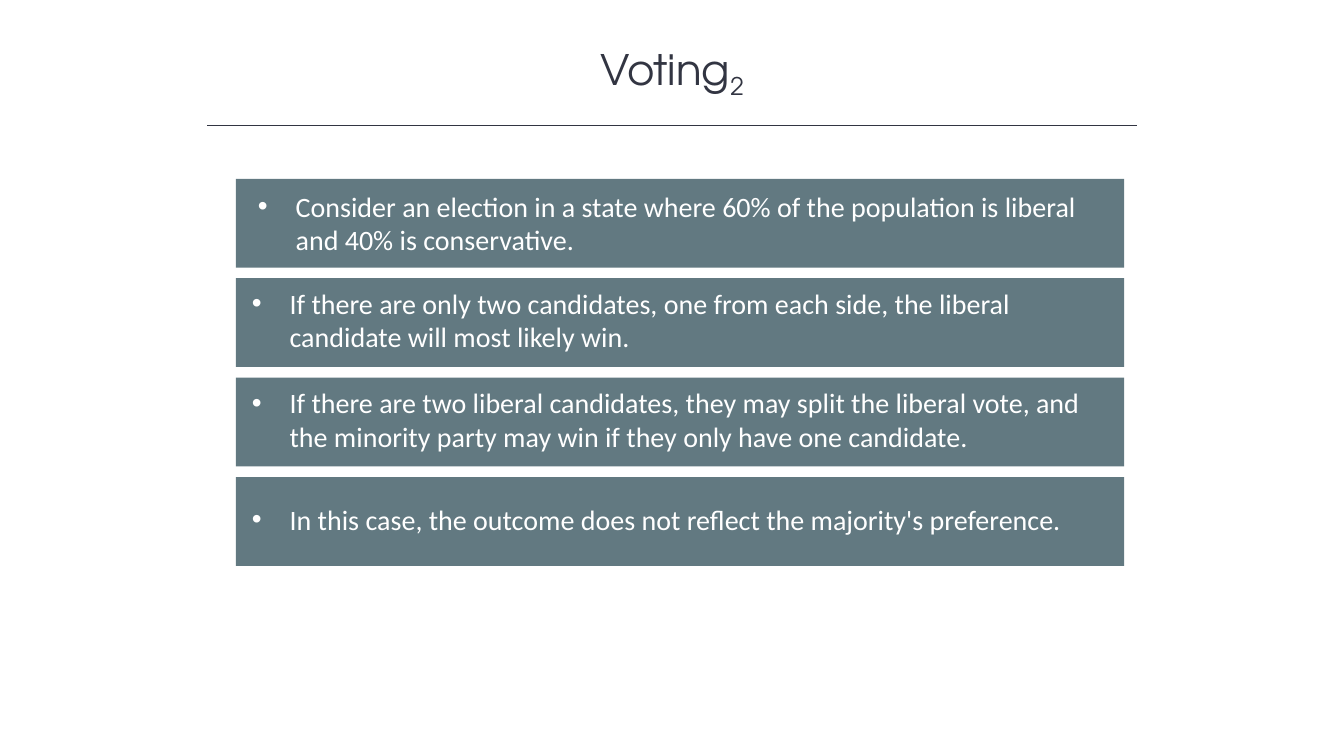
from pptx import Presentation
from pptx import util as u
from pptx.dml import color
from pptx.enum import shapes, text
from pptx.oxml import ns
from lxml import etree

INK, SLATE, WHITE = "323542", "627981", "FFFFFF"
BAR_LEFT, BAR_TOP, BAR_WIDTH, BAR_HEIGHT, BAR_PITCH = 168.5, 127.7, 634.5, 63.4, 71.05
TEXT_WIDTH = 615

# Statement, left and top offset inside its bar, height of its text box
STATEMENTS = [
    ("Consider an election in a state where 60% of the population is liberal "
     "and 40% is conservative.", 8.6, 4, 55.4),
    ("If there are only two candidates, one from each side, the liberal "
     "candidate will most likely win.", 4.3, 2.2, 55.4),
    ("If there are two liberal candidates, they may split the liberal vote, "
     "and the minority party may win if they only have one candidate.", 4.3, 2.2, 55.4),
    ("In this case, the outcome does not reflect the majority's preference.", 4.3, 14.3, 31.7),
]


def rgb(value):
    return color.RGBColor.from_string(value)


def add_bullet(paragraph, indent):
    properties = paragraph._p.get_or_add_pPr()
    properties.set("marL", str(u.Pt(indent)))
    properties.set("indent", str(-u.Pt(indent)))
    etree.SubElement(properties, ns.qn("a:buFont"), typeface="Arial")
    etree.SubElement(properties, ns.qn("a:buChar"), char="•")


def write_text(shape, runs, *, font, size, ink, align=text.PP_ALIGN.LEFT,
               anchor=text.MSO_ANCHOR.TOP, bullet_indent=None):
    """Fill a shape with one paragraph of (text, baseline percent) runs."""
    frame = shape.text_frame
    frame.word_wrap = True
    frame.auto_size = text.MSO_AUTO_SIZE.SHAPE_TO_FIT_TEXT
    frame.vertical_anchor = anchor
    paragraph = frame.paragraphs[0]
    paragraph.alignment = align
    if bullet_indent:
        add_bullet(paragraph, bullet_indent)
    for content, baseline in runs:
        run = paragraph.add_run()
        run.text = content
        run.font.name = font
        run.font.size = u.Pt(size)
        run.font.color.rgb = rgb(ink)
        if baseline:
            run._r.get_or_add_rPr().set("baseline", str(baseline * 1000))


class VotingSlide:
    title_font = "TeX Gyre Adventor"
    body_font = "Calibri"

    def __init__(self, presentation):
        self.slide = presentation.slides.add_slide(presentation.slide_layouts[6])
        self.slide.background.fill.solid()
        self.slide.background.fill.fore_color.rgb = rgb(WHITE)

    def title(self, runs, left, top, width, height):
        box = self.slide.shapes.add_textbox(*map(u.Pt, (left, top, width, height)))
        write_text(box, runs, font=self.title_font, size=30, ink=INK,
                   align=text.PP_ALIGN.CENTER, anchor=text.MSO_ANCHOR.MIDDLE)

    def rule(self, left, right, y):
        line = self.slide.shapes.add_connector(
            shapes.MSO_CONNECTOR.STRAIGHT, *map(u.Pt, (left, y, right, y)))
        line.line.color.rgb = rgb(INK)
        line.line.width = u.Pt(1)
        etree.SubElement(line._element.spPr, ns.qn("a:effectLst"))

    def rectangle(self, group, left, top, width, height):
        shape = group.shapes.add_shape(
            shapes.MSO_SHAPE.RECTANGLE, *map(u.Pt, (left, top, width, height)))
        shape.shadow.inherit = False
        shape.fill.solid()
        shape.fill.fore_color.rgb = rgb(SLATE)
        shape.line.fill.background()
        return shape

    def statement(self, top, content, offset_x, offset_y, height):
        group = self.slide.shapes.add_group_shape()
        self.rectangle(group, BAR_LEFT, top, BAR_WIDTH, BAR_HEIGHT)
        box = self.rectangle(group, BAR_LEFT + offset_x, top + offset_y, TEXT_WIDTH, height)
        write_text(box, [(content, 0)], font=self.body_font, size=20, ink=WHITE,
                   bullet_indent=27)


def main():
    presentation = Presentation()
    presentation.slide_width, presentation.slide_height = u.Pt(960), u.Pt(540)
    voting = VotingSlide(presentation)
    voting.title([("Voting", 0), ("2", -25)], 120, 29.5, 720, 44)
    voting.rule(148, 812, 89.5)
    for row, statement in enumerate(STATEMENTS):
        voting.statement(BAR_TOP + row * BAR_PITCH, *statement)
    presentation.save("out.pptx")


if __name__ == "__main__":
    main()
